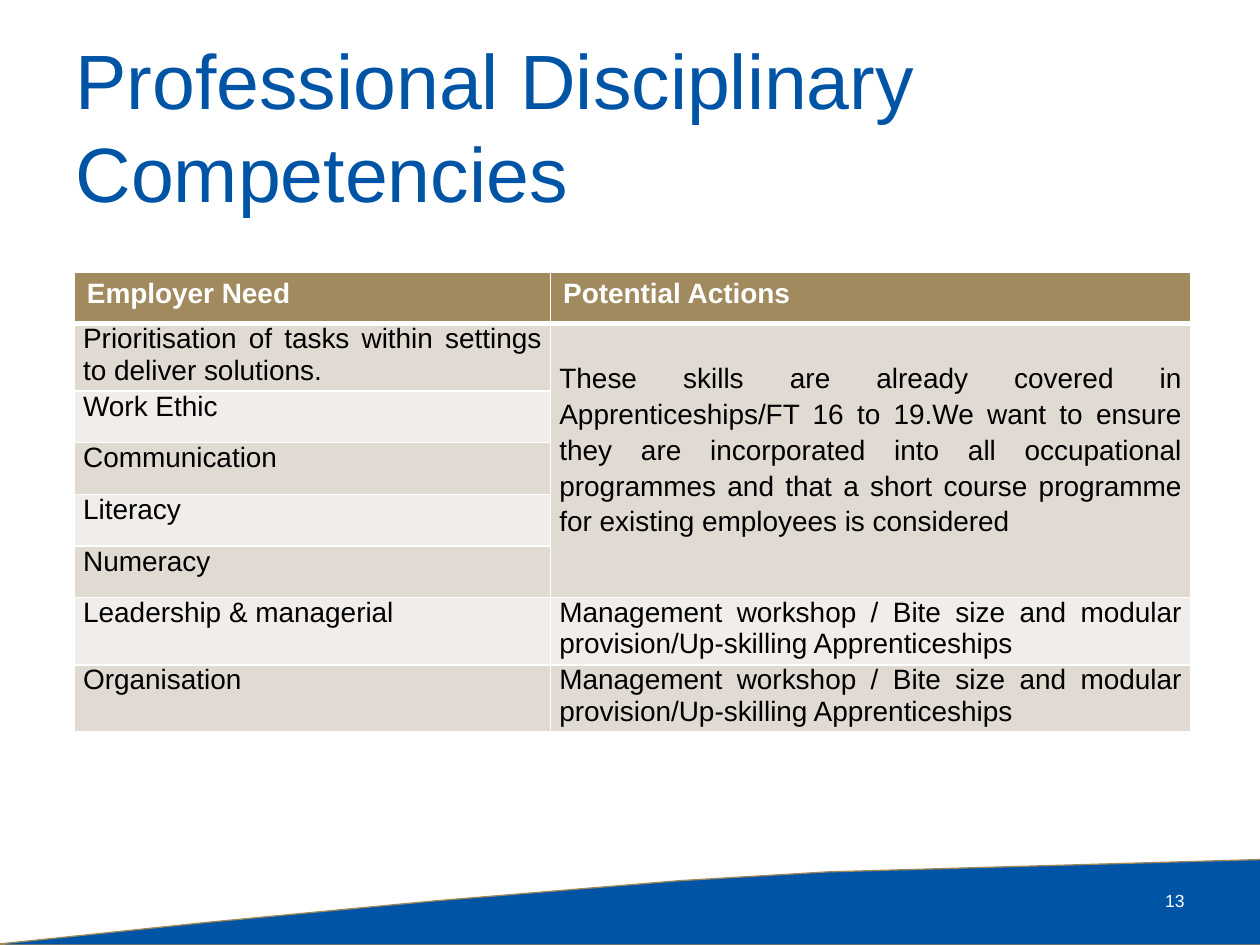
from dataclasses import dataclass

import pptx
import pptx.dml.color
import pptx.enum.text
import pptx.oxml
import pptx.oxml.ns
import pptx.util
from pptx.util import Inches

FONT = "Arial"
COLORS = {
    "blue": "0054A6",
    "gold": "9F875A",
    "header": "A18A5E",
    "dark_band": "E0DAD2",
    "light_band": "F0EDEA",
    "white": "FFFFFF",
    "black": "000000",
}
ALIGN = pptx.enum.text.PP_ALIGN
MIDDLE = pptx.enum.text.MSO_ANCHOR.MIDDLE

WORKSHOP = ("Management workshop / Bite size and modular "
            "provision/Up-skilling Apprenticeships")
COVERED = ("These skills are already covered in Apprenticeships/FT 16 to 19."
           "We want to ensure they are incorporated into all occupational "
           "programmes and that a short course programme for existing "
           "employees is considered")


@dataclass
class Competency:
    need: str
    action: str
    height: float = 0.41
    span: int = 1


COMPETENCIES = [
    Competency("Prioritisation of tasks within settings to deliver solutions.",
               COVERED, 0.53, span=5),
    Competency("Work Ethic", ""),
    Competency("Communication", ""),
    Competency("Literacy", ""),
    Competency("Numeracy", ""),
    Competency("Leadership & managerial", WORKSHOP, 0.53),
    Competency("Organisation", WORKSHOP, 0.53),
]
HEADINGS = ("Employer Need", "Potential Actions")
HEADER_HEIGHT = 0.41
COLUMN_WIDTHS = (3.78, 5.08)
WAVE = [(10.06, 6.82), (6.57, 6.92), (5.39, 6.99), (3.45, 7.15),
        (1.65, 7.32), (-0.08, 7.5), (10.05, 7.5)]


def color(name: str) -> pptx.dml.color.RGBColor:
    return pptx.dml.color.RGBColor.from_string(COLORS[name])


def write(frame, text: str, size: float, color_name: str,
          align=ALIGN.LEFT, bold: bool = False):
    paragraph = frame.paragraphs[0]
    paragraph.alignment = align
    run = paragraph.add_run()
    run.text = text
    run.font.name = FONT
    run.font.size = pptx.util.Pt(size)
    run.font.bold = bold
    run.font.color.rgb = color(color_name)
    return paragraph


def style_cell(cell, fill: str, side: float, vertical: float,
               bottom_line: float = 1, top_line: float = 1) -> None:
    cell.margin_left = cell.margin_right = Inches(side)
    cell.margin_top = cell.margin_bottom = Inches(vertical)
    # Borders come before the fill in the cell properties
    properties = cell._tc.get_or_add_tcPr()
    for edge, width in (("L", 1), ("R", 1), ("T", top_line), ("B", bottom_line)):
        properties.append(pptx.oxml.parse_xml(
            f'<a:ln{edge} {pptx.oxml.ns.nsdecls("a")} w="{pptx.util.Pt(width)}">'
            f'<a:solidFill><a:srgbClr val="{COLORS["white"]}"/></a:solidFill>'
            f'</a:ln{edge}>'))
    cell.fill.solid()
    cell.fill.fore_color.rgb = color(fill)


def draw_wave(slide) -> None:
    builder = slide.shapes.build_freeform(
        *(Inches(value) for value in WAVE[0]))
    builder.add_line_segments(
        [(Inches(x), Inches(y)) for x, y in WAVE[1:]], close=True)
    shape = builder.convert_to_shape()
    shape.shadow.inherit = False
    shape.fill.solid()
    shape.fill.fore_color.rgb = color("blue")
    shape.line.color.rgb = color("gold")
    shape.line.width = pptx.util.Pt(0.75)


def draw_title(slide) -> None:
    title = slide.shapes.title
    title.left, title.top = Inches(0.5), Inches(0.37)
    title.width, title.height = Inches(9), Inches(1.25)
    title.text_frame.word_wrap = True
    title.text_frame.vertical_anchor = MIDDLE
    write(title.text_frame, "Professional Disciplinary Competencies", 44, "blue")


def draw_page_number(slide) -> None:
    box = slide.shapes.add_textbox(
        Inches(7.17), Inches(6.95), Inches(2.33), Inches(0.4))
    box.text_frame.word_wrap = True
    box.text_frame.vertical_anchor = MIDDLE
    write(box.text_frame, "13", 10, "white", ALIGN.RIGHT)


def draw_table(slide) -> None:
    heights = [HEADER_HEIGHT] + [item.height for item in COMPETENCIES]
    table = slide.shapes.add_table(
        len(heights), len(COLUMN_WIDTHS), Inches(0.59), Inches(2.16),
        Inches(sum(COLUMN_WIDTHS)), Inches(sum(heights))).table
    for column, width in zip(table.columns, COLUMN_WIDTHS):
        column.width = Inches(width)
    for row, height in zip(table.rows, heights):
        row.height = Inches(height)

    # Header row
    for index, heading in enumerate(HEADINGS):
        cell = table.cell(0, index)
        style_cell(cell, "header", 0.1, 0.05, bottom_line=3)
        write(cell.text_frame, heading, 16, "white", bold=True)

    # Banded body rows
    for number, item in enumerate(COMPETENCIES, start=1):
        band = "dark_band" if number % 2 else "light_band"
        for index, text in enumerate((item.need, item.action)):
            cell = table.cell(number, index)
            style_cell(cell, band, 0.07, 0, top_line=3 if number == 1 else 1)
            if not text:
                continue
            paragraph = write(cell.text_frame, text, 16, "black", ALIGN.JUSTIFY)
            if index == 1 and item.span > 1:
                cell.merge(table.cell(number + item.span - 1, index))
                cell.margin_top = Inches(0.28)
                paragraph.line_spacing = 1.15


def main() -> None:
    presentation = pptx.Presentation()
    presentation.slide_width = Inches(10)
    presentation.slide_height = Inches(7.5)
    slide = presentation.slides.add_slide(presentation.slide_layouts[5])
    draw_wave(slide)
    draw_title(slide)
    draw_page_number(slide)
    draw_table(slide)
    presentation.save("out.pptx")


if __name__ == "__main__":
    main()
